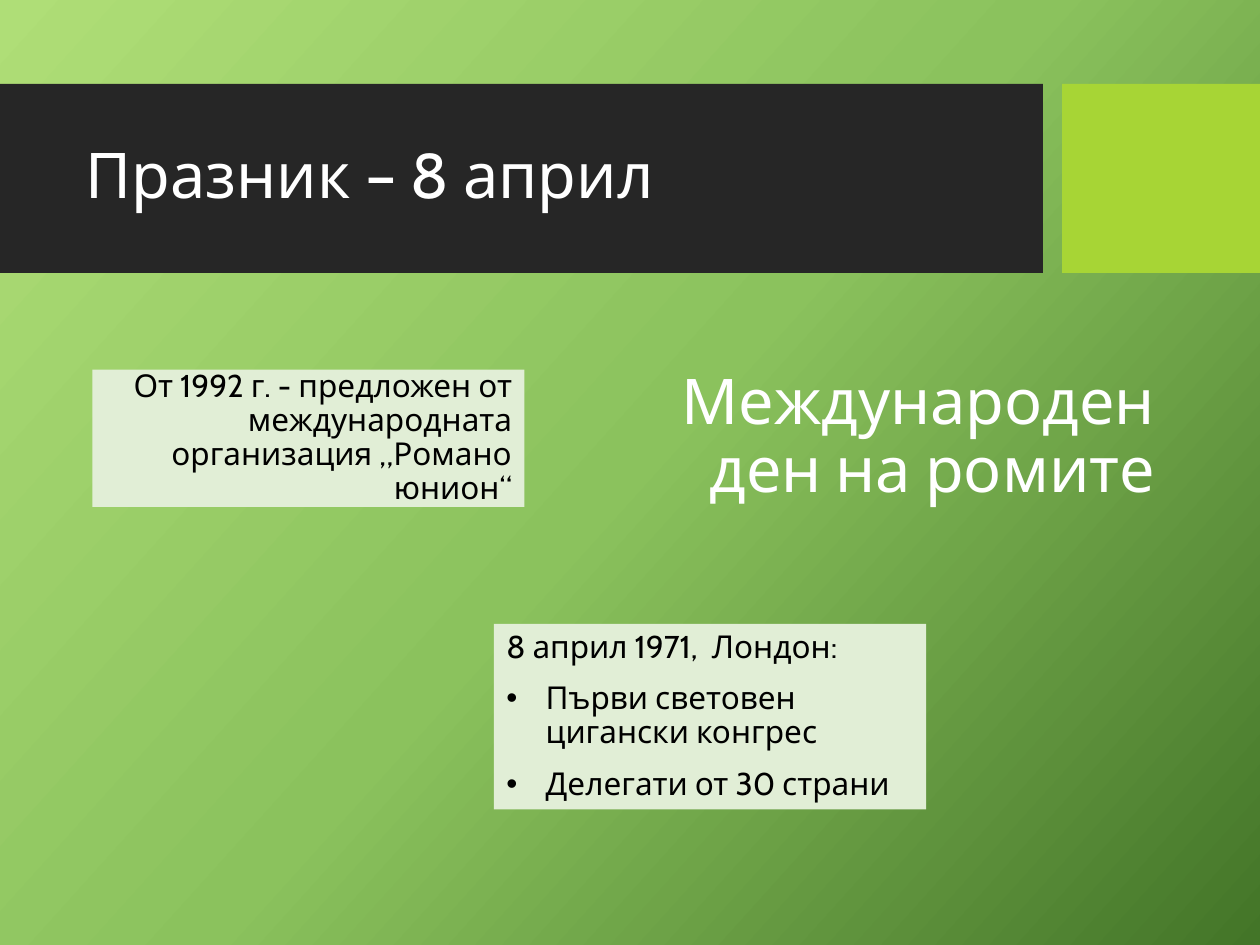
from copy import deepcopy
from lxml.etree import SubElement
from pptx import Presentation
from pptx.dml.color import RGBColor
from pptx.enum.shapes import MSO_SHAPE
from pptx.enum.text import MSO_ANCHOR, PP_ALIGN
from pptx.oxml.ns import qn
from pptx.util import Pt

COLORS = {
    "light": "AFDE77",
    "middle": "8BC25D",
    "dark": "437528",
    "band": "262626",
    "accent": "A7D535",
    "panel": "E1EED6",
    "white": "FFFFFF",
    "black": "000000",
}


def add_block(page, place, color):
    block = page.shapes.add_shape(MSO_SHAPE.RECTANGLE, *map(Pt, place))
    block.shadow.inherit = False
    block.fill.solid()
    block.fill.fore_color.rgb = RGBColor.from_string(COLORS[color])
    block.line.fill.background()
    return block


def write_text(box, lines, size, color, align):
    frame = box.text_frame
    frame.word_wrap = True
    frame.vertical_anchor = MSO_ANCHOR.MIDDLE
    for index, (text, bullet) in enumerate(lines):
        para = frame.add_paragraph() if index else frame.paragraphs[0]
        if bullet:
            properties = para._p.get_or_add_pPr()
            properties.set("marL", str(Pt(22.5)))
            properties.set("indent", str(-Pt(22.5)))
            SubElement(properties, qn("a:buFont")).set("typeface", "Arial")
            SubElement(properties, qn("a:buChar")).set("char", "•")
        para.alignment = align
        para.line_spacing = 0.9
        if index:
            para.space_before = Pt(10)
        span = para.add_run()
        span.text = text
        span.font.name = "Cabin"
        span.font.size = Pt(size)
        span.font.color.rgb = RGBColor.from_string(COLORS[color])


deck = Presentation()
deck.slide_width, deck.slide_height = Pt(720), Pt(540)
page = deck.slides.add_slide(deck.slide_layouts[6])

background = page.background.fill
background.gradient()
background.gradient_angle = 318
stop_list = next(page._element.iter(qn("a:gsLst")))
stop_list.insert(1, deepcopy(stop_list[0]))
for stop, color, position in zip(
    background.gradient_stops, ("light", "middle", "dark"), (0, 0.5, 1)
):
    stop.color.rgb = RGBColor.from_string(COLORS[color])
    stop.position = position

add_block(page, (0, 48, 596, 108), "band")
add_block(page, (607, 48, 113, 108), "accent")

headings = [
    ("Празник – 8 април", (42, 59, 543, 85), PP_ALIGN.LEFT),
    ("Международен ден на ромите", (342, 207.5, 325, 85.5), PP_ALIGN.RIGHT),
]
for text, place, align in headings:
    box = page.shapes.add_textbox(*map(Pt, place))
    write_text(box, [(text, False)], 36, "white", align)

panels = [
    (
        (52.75, 211.25, 247, 78.5),
        [("От 1992 г. - предложен от международната организация „Романо юнион“", False)],
        PP_ALIGN.RIGHT,
    ),
    (
        (282.25, 356.5, 247, 106),
        [
            ("8 април 1971,  Лондон:", False),
            ("Първи световен цигански конгрес", True),
            ("Делегати от 30 страни", True),
        ],
        PP_ALIGN.LEFT,
    ),
]
for place, lines, align in panels:
    panel = add_block(page, place, "panel")
    write_text(panel, lines, 18, "black", align)

deck.save("out.pptx")
